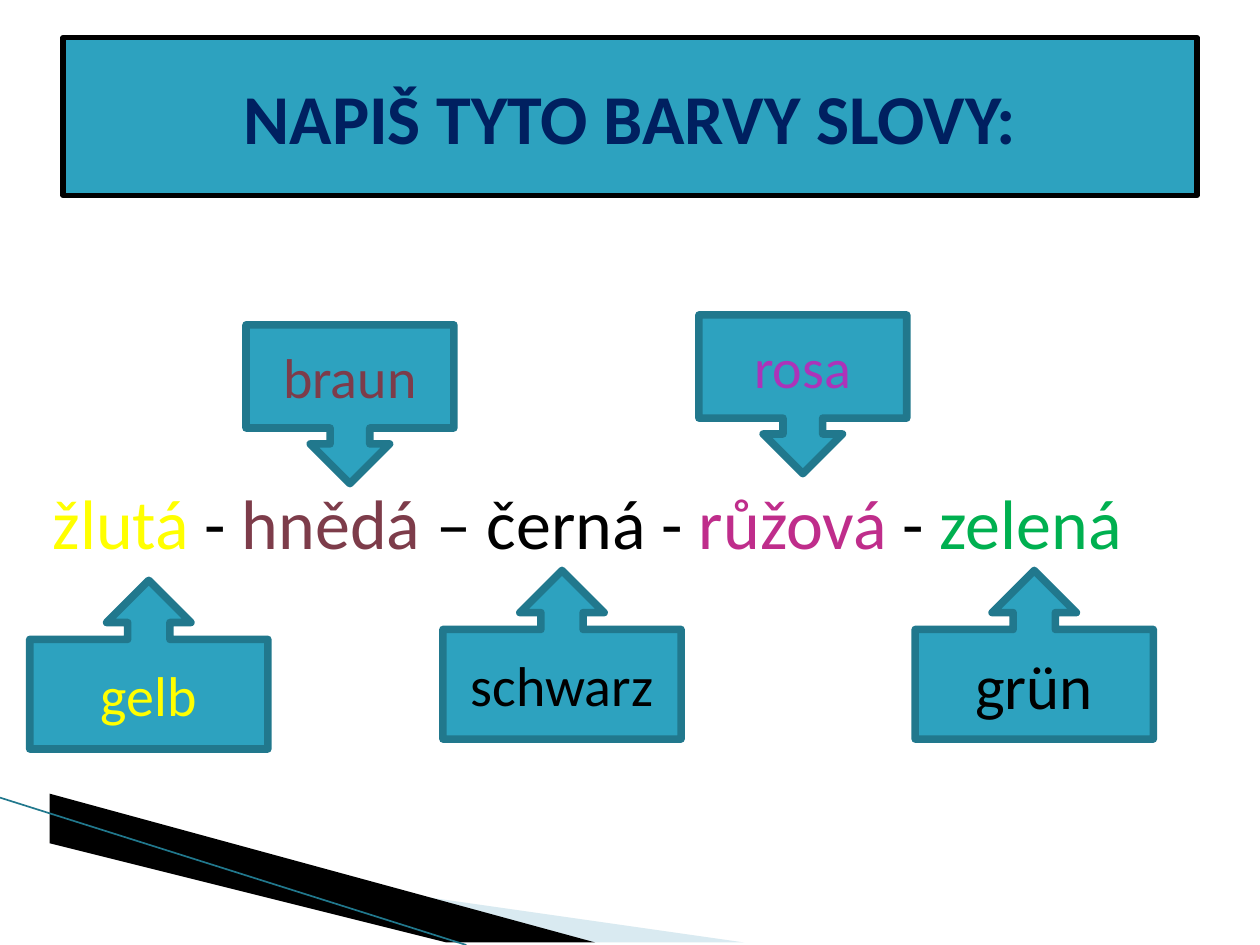
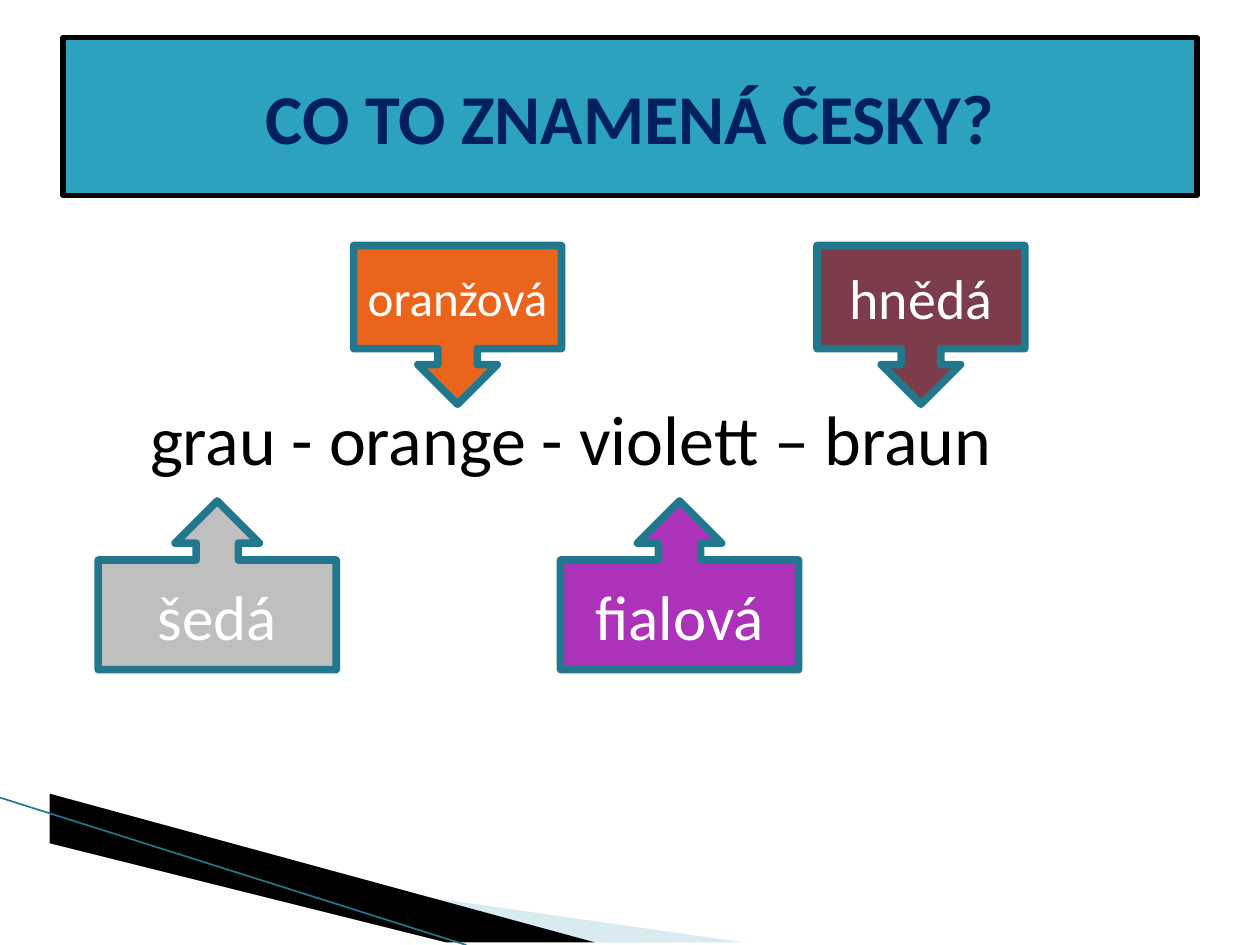
from dataclasses import dataclass

from lxml import etree
from pptx import Presentation
from pptx import util as u
from pptx.dml import color
from pptx.enum import shapes, text
from pptx.oxml import ns

FONT = "Calibri"
COLORS = {
    "teal": "2DA2BF",
    "dark teal": "21788D",
    "pale blue": "A0CBDC",
    "navy": "002060",
    "black": "000000",
    "white": "FFFFFF",
    "yellow": "FFFF00",
    "brown": "7D3C4A",
    "pink": "BF2D8B",
    "green": "00B050",
    "violet": "AC33B9",
    "orange": "EB641B",
    "grey": "BFBFBF",
}
UP = shapes.MSO_SHAPE.UP_ARROW_CALLOUT
DOWN = shapes.MSO_SHAPE.DOWN_ARROW_CALLOUT
CALLOUT_SIZES = {UP: (4.8, 3.4), DOWN: (4.19, 3.2)}


@dataclass(frozen=True)
class Word:
    text: str
    color: str = "black"


@dataclass(frozen=True)
class Callout:
    word: Word
    direction: shapes.MSO_SHAPE
    left: float
    top: float
    fill: str = "teal"
    size: int = 32


@dataclass(frozen=True)
class Exercise:
    title: str
    words: list[Word]
    text_top: float
    right_margin: float
    callouts: list[Callout]


@dataclass(frozen=True)
class Wedge:
    points: list[tuple[float, float]]
    fill: str
    opacity: int = 100


WEDGES = [
    Wedge([(1.4, 16.53), (15, 19.05), (11.55, 19.05), (1.4, 16.51)], "pale blue", 40),
    Wedge([(1.35, 16.48), (11.55, 19.05), (9.4, 19.05), (1.37, 16.51)], "black"),
]

EXERCISES = [
    Exercise(
        "NAPIŠ TYTO BARVY SLOVY:",
        [
            Word("žlutá", "yellow"),
            Word(" - "),
            Word("hnědá", "brown"),
            Word(" – černá - "),
            Word("růžová", "pink"),
            Word(" - "),
            Word("zelená", "green"),
        ],
        5.21,
        0.25,
        [
            Callout(Word("gelb", "yellow"), UP, 0.6, 11.7),
            Callout(Word("schwarz"), UP, 8.93, 11.5),
            Callout(Word("grün"), UP, 18.45, 11.5, size=36),
            Callout(Word("braun", "brown"), DOWN, 4.96, 6.55),
            Callout(Word("rosa", "violet"), DOWN, 14.09, 6.35),
        ],
    ),
    Exercise(
        "CO TO ZNAMENÁ ČESKY?",
        [Word("grau - orange - violett – braun")],
        3.53,
        0.9,
        [
            Callout(Word("šedá", "white"), UP, 1.98, 10.1, "grey", 36),
            Callout(Word("fialová", "white"), UP, 11.3, 10.1, "violet", 36),
            Callout(Word("oranžová", "white"), DOWN, 7.13, 4.95, "orange", 28),
            Callout(Word("hnědá", "white"), DOWN, 16.47, 4.95, "brown"),
        ],
    ),
]


def rgb(name: str) -> color.RGBColor:
    return color.RGBColor.from_string(COLORS[name])


def place(shape, left: float, top: float, width: float, height: float) -> None:
    shape.left, shape.top = u.Cm(left), u.Cm(top)
    shape.width, shape.height = u.Cm(width), u.Cm(height)


def paint(shape, fill: str, line: str, line_width: float) -> None:
    shape.fill.solid()
    shape.fill.fore_color.rgb = rgb(fill)
    shape.line.color.rgb = rgb(line)
    shape.line.width = u.Pt(line_width)


def write_centred(shape, word: Word, size: int, bold: bool = False) -> None:
    frame = shape.text_frame
    frame.word_wrap = True
    frame.auto_size = text.MSO_AUTO_SIZE.NONE
    frame.vertical_anchor = text.MSO_ANCHOR.MIDDLE
    frame.margin_left = frame.margin_right = u.Cm(0.2)
    paragraph = frame.paragraphs[0]
    paragraph.text = word.text
    paragraph.alignment = text.PP_ALIGN.CENTER
    font = paragraph.font
    font.name, font.size, font.bold = FONT, u.Pt(size), bold
    font.color.rgb = rgb(word.color)


def add_wedge(slide, wedge: Wedge) -> None:
    builder = slide.shapes.build_freeform(*wedge.points[0], scale=u.Cm(1))
    builder.add_line_segments(wedge.points[1:])
    shape = builder.convert_to_shape()
    shape.shadow.inherit = False
    shape.fill.solid()
    shape.fill.fore_color.rgb = rgb(wedge.fill)
    shape.line.fill.background()
    if wedge.opacity < 100:
        fill_color = shape.element.spPr.find(".//" + ns.qn("a:srgbClr"))
        alpha = etree.SubElement(fill_color, ns.qn("a:alpha"))
        alpha.set("val", str(wedge.opacity * 1000))


def add_corner(slide) -> None:
    for wedge in WEDGES:
        add_wedge(slide, wedge)
    edge = slide.shapes.add_connector(
        shapes.MSO_CONNECTOR.STRAIGHT, u.Cm(0), u.Cm(16.08), u.Cm(9.4), u.Cm(19.05)
    )
    edge.line.color.rgb = rgb("dark teal")
    edge.line.width = u.Pt(0.95)
    etree.SubElement(edge.element.spPr, ns.qn("a:effectLst"))


def fill_title(slide, title: str) -> None:
    shape = slide.shapes.title
    place(shape, 1.27, 0.76, 22.86, 3.18)
    paint(shape, "teal", "black", 3)
    write_centred(shape, Word(title, "navy"), 40, bold=True)


def fill_body(slide, exercise: Exercise) -> None:
    shape = slide.placeholders[1]
    place(shape, 0, 4.45, 23.42, 14.2)
    frame = shape.text_frame
    frame.word_wrap = True
    frame.auto_size = text.MSO_AUTO_SIZE.NONE
    frame.vertical_anchor = text.MSO_ANCHOR.TOP
    frame.margin_top = u.Cm(exercise.text_top)
    frame.margin_left = u.Cm(0.5)
    frame.margin_right = u.Cm(exercise.right_margin)
    paragraph = frame.paragraphs[0]
    paragraph.alignment = text.PP_ALIGN.CENTER
    paragraph.space_before = u.Pt(0)
    properties = paragraph._p.get_or_add_pPr()
    properties.set("marL", "0")
    properties.set("indent", "0")
    etree.SubElement(properties, ns.qn("a:buNone"))
    paragraph.font.name, paragraph.font.size = FONT, u.Pt(40)
    for word in exercise.words:
        run = paragraph.add_run()
        run.text = word.text
        run.font.color.rgb = rgb(word.color)


def add_callout(slide, callout: Callout) -> None:
    width, height = CALLOUT_SIZES[callout.direction]
    shape = slide.shapes.add_shape(
        callout.direction,
        u.Cm(callout.left), u.Cm(callout.top), u.Cm(width), u.Cm(height),
    )
    shape.shadow.inherit = False
    paint(shape, callout.fill, "dark teal", 4.33)
    write_centred(shape, callout.word, callout.size)


def add_exercise(presentation, exercise: Exercise) -> None:
    slide = presentation.slides.add_slide(presentation.slide_layouts[1])
    add_corner(slide)
    fill_title(slide, exercise.title)
    fill_body(slide, exercise)
    for callout in exercise.callouts:
        add_callout(slide, callout)


def main() -> None:
    presentation = Presentation()
    presentation.slide_width, presentation.slide_height = u.Cm(25.4), u.Cm(19.05)
    for exercise in EXERCISES:
        add_exercise(presentation, exercise)
    presentation.save("out.pptx")


if __name__ == "__main__":
    main()
